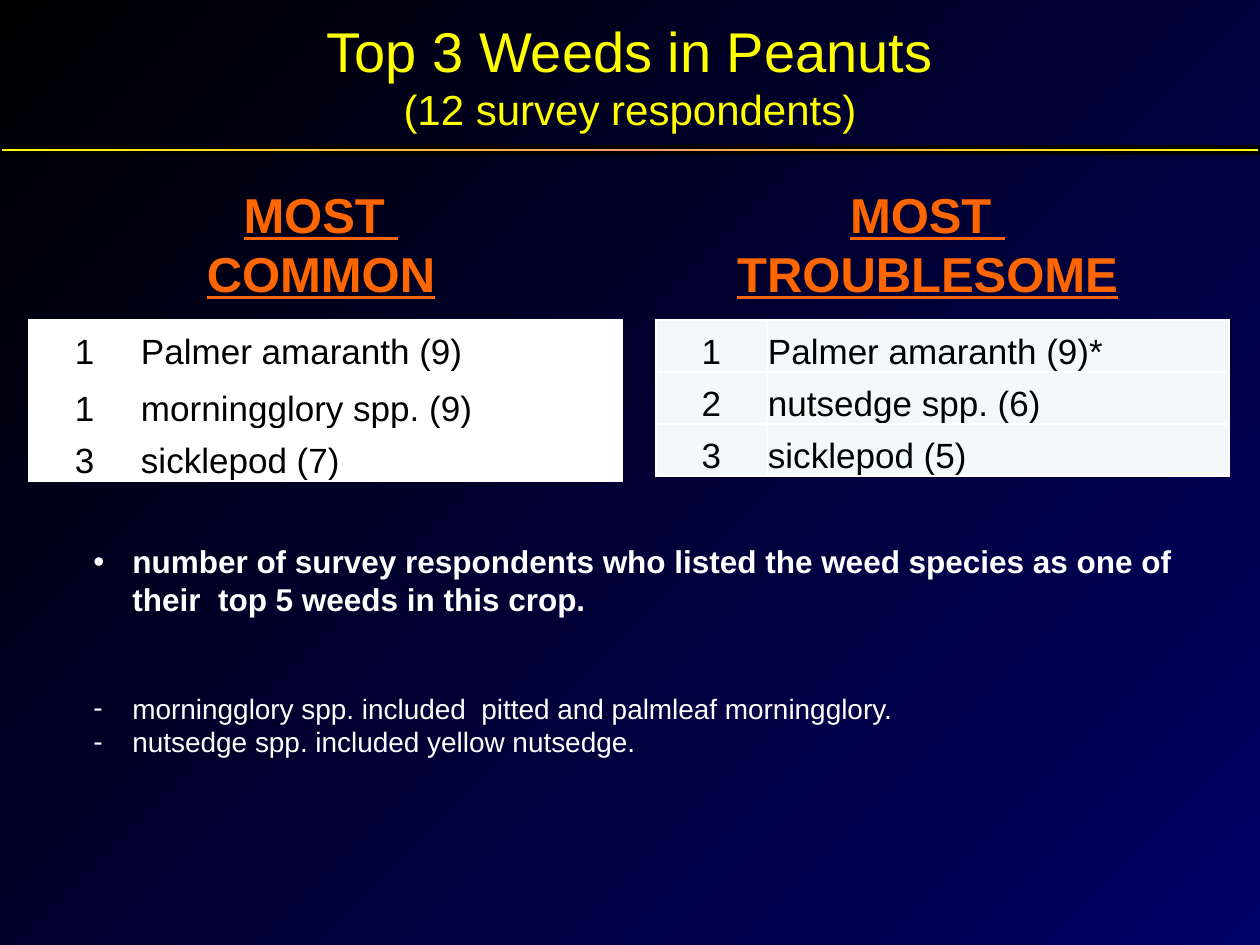
import copy

from lxml import etree
from pptx import Presentation
from pptx import util as u
from pptx.dml.color import RGBColor
from pptx.enum import shapes, text
from pptx.oxml import ns

BLACK = RGBColor(0x00, 0x00, 0x00)
NAVY = RGBColor(0x00, 0x00, 0x66)
WHITE = RGBColor(0xFF, 0xFF, 0xFF)
MINT = RGBColor(0xF3, 0xF9, 0xFA)
YELLOW = RGBColor(0xFF, 0xFF, 0x00)
PEACH = RGBColor(0xFF, 0x99, 0x66)
ORANGE = RGBColor(0xFF, 0x66, 0x00)

PX_PER_INCH = 126
CENTER, LEFT = text.PP_ALIGN.CENTER, text.PP_ALIGN.LEFT


def px(length):
    return u.Emu(round(length * 914400 / PX_PER_INCH))


def add_xml(parent, tag, **attributes):
    return etree.SubElement(parent, ns.qn(tag), attributes)


def fill_gradient(fill, colors, angle):
    """Spread the colours evenly; angle is counter-clockwise in degrees."""
    fill.gradient()
    fill.gradient_angle = angle
    first = fill.gradient_stops[0]
    stop_list = first._gs.getparent()
    while len(stop_list) < len(colors):
        stop_list.append(copy.deepcopy(stop_list[0]))
    for index, (stop, color) in enumerate(zip(fill.gradient_stops, colors)):
        stop.color.rgb = color
        stop.position = index / (len(colors) - 1)


class SlideBuilder:
    font = "Arial"

    def __init__(self, page):
        self.page = page

    def background(self, *colors):
        fill_gradient(self.page.background.fill, colors, 315)

    def style(self, para, size, color, align=LEFT, bold=False, underline=False):
        para.alignment = align
        for span in para.runs:
            span.font.name = self.font
            span.font.size = u.Pt(size)
            span.font.color.rgb = color
            span.font.bold = bold
            span.font.underline = underline

    def title(self, left, top, width, height, lines):
        box = self.page.shapes.title
        box.left, box.top, box.width, box.height = map(px, (left, top, width, height))
        frame = box.text_frame
        frame.vertical_anchor = text.MSO_ANCHOR.MIDDLE
        frame.text = "\n".join(line for line, _ in lines)
        for para, (_, size) in zip(frame.paragraphs, lines):
            self.style(para, size, YELLOW, CENTER)

    def text_box(self, left, top, width, height, lines, wrap=True):
        box = self.page.shapes.add_textbox(*map(px, (left, top, width, height)))
        frame = box.text_frame
        frame.word_wrap = wrap
        frame.auto_size = text.MSO_AUTO_SIZE.SHAPE_TO_FIT_TEXT
        frame.text = "\n".join(lines)
        return frame.paragraphs

    def heading(self, left, top, width, height, lines, wrap=True):
        for para in self.text_box(left, top, width, height, lines, wrap):
            self.style(para, 28, ORANGE, CENTER, bold=True, underline=True)

    def bullets(self, left, top, width, height, items):
        """Each item is (bullet, wording, size, bold, points of space before)."""
        paras = self.text_box(left, top, width, height, [item[1] for item in items])
        for para, (bullet, _, size, bold, space) in zip(paras, items):
            self.style(para, size, WHITE, bold=bold)
            para.space_before = u.Pt(space)
            properties = para._p.get_or_add_pPr()
            properties.set("marL", str(px(39)))
            properties.set("indent", str(-px(39)))
            add_xml(properties, "a:buFont", typeface=self.font)
            add_xml(properties, "a:buChar", char=bullet)

    def table(self, left, top, columns, rows, entries, color):
        frame = self.page.shapes.add_table(
            len(rows), len(columns), *map(px, (left, top, sum(columns), sum(rows))))
        table = frame.table
        for column, width in zip(table.columns, columns):
            column.width = px(width)
        for row, height, entry in zip(table.rows, rows, entries):
            row.height = px(height)
            for cell, wording, align in zip(row.cells, entry, (CENTER, LEFT)):
                cell.text = wording
                self.style(cell.text_frame.paragraphs[0], 20, BLACK, align)
                self.format_cell(cell, color)

    def format_cell(self, cell, color):
        cell.vertical_anchor = text.MSO_ANCHOR.BOTTOM
        cell.margin_left = cell.margin_right = cell.margin_top = px(1)
        cell.margin_bottom = 0
        properties = cell._tc.get_or_add_tcPr()
        for side in ("a:lnL", "a:lnR", "a:lnT", "a:lnB"):
            border = add_xml(properties, side, w=str(u.Pt(1)))
            add_xml(add_xml(border, "a:solidFill"), "a:srgbClr", val=str(WHITE))
        cell.fill.solid()
        cell.fill.fore_color.rgb = color

    def divider(self, left, top, width, height, *colors):
        bar = self.page.shapes.add_shape(
            shapes.MSO_SHAPE.RECTANGLE, *map(px, (left, top, width, height)))
        bar.shadow.inherit = False
        fill_gradient(bar.fill, colors, 0)
        bar.line.color.rgb = BLACK
        bar.line.width = u.Pt(2.25)


def main():
    deck = Presentation()
    deck.slide_width, deck.slide_height = px(1260), px(945)
    slide = SlideBuilder(deck.slides.add_slide(deck.slide_layouts[5]))

    slide.background(BLACK, NAVY)
    slide.title(42, 0, 1176, 151,
                [("Top 3 Weeds in Peanuts", 32), ("(12 survey respondents)", 24)])
    slide.heading(170, 178, 302, 131, ["MOST ", "COMMON"])
    slide.heading(722, 178, 411, 131, ["MOST ", "TROUBLESOME"], wrap=False)
    slide.table(29, 320, (111, 482), (52, 57, 52), [
        ("1", "Palmer amaranth (9)"),
        ("1", "morningglory spp. (9)"),
        ("3", "sicklepod (7)"),
    ], WHITE)
    slide.table(656, 320, (111, 462), (52, 52, 52), [
        ("1", "Palmer amaranth (9)*"),
        ("2", "nutsedge spp. (6)"),
        ("3", "sicklepod (5)"),
    ], MINT)
    slide.bullets(81, 536, 1116, 233, [
        ("•", "number of survey respondents who listed the weed species as one of "
              "their  top 5 weeds in this crop.", 18, True, 0),
        ("-", "morningglory spp. included  pitted and palmleaf morningglory.",
         16, False, 42),
        ("-", "nutsedge spp. included yellow nutsedge.", 16, False, 0),
    ])
    slide.divider(0, 147, 1260, 6, YELLOW, PEACH, YELLOW)

    deck.save("out.pptx")


if __name__ == "__main__":
    main()
